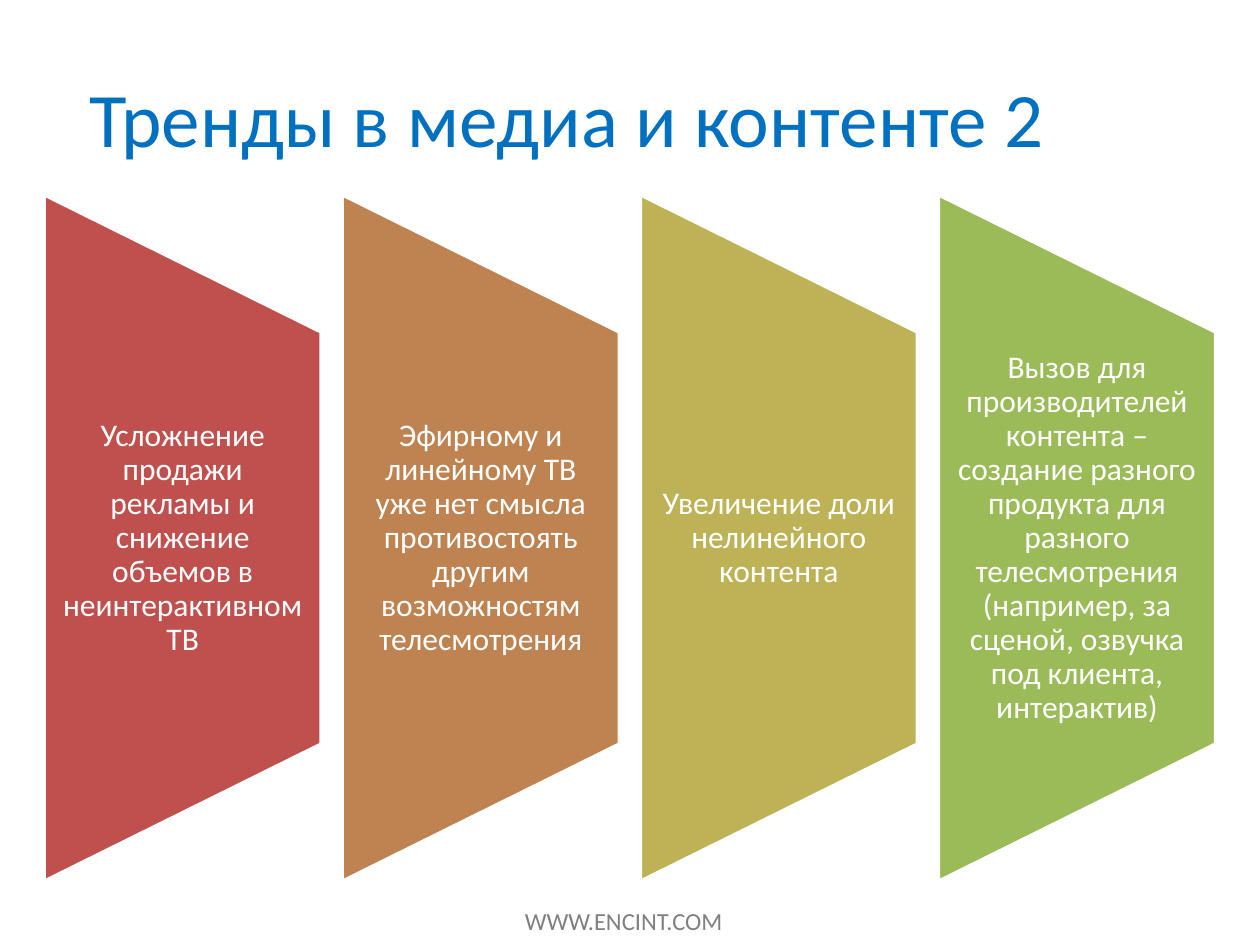
import pptx
import pptx.util
from pptx.dml.color import RGBColor
from pptx.enum.shapes import MSO_SHAPE
from pptx.enum.text import MSO_ANCHOR, PP_ALIGN
from pptx.util import Inches

WHITE = RGBColor(0xFF, 0xFF, 0xFF)
BLUE = RGBColor(0x00, 0x70, 0xC0)
GRAY = RGBColor(0x80, 0x80, 0x80)
RED = RGBColor(0xC0, 0x50, 0x4D)
ORANGE = RGBColor(0xBE, 0x83, 0x51)
OLIVE = RGBColor(0xBD, 0xB2, 0x55)
GREEN = RGBColor(0x9B, 0xBB, 0x59)

TRENDS = [
    (RED, "Усложнение продажи рекламы и снижение объемов в неинтерактивном ТВ"),
    (ORANGE, "Эфирному и линейному ТВ уже нет смысла противостоять другим "
             "возможностям телесмотрения"),
    (OLIVE, "Увеличение доли нелинейного контента"),
    (GREEN, "Вызов для производителей контента – создание разного продукта для "
            "разного телесмотрения (например, за сценой, озвучка под клиента, "
            "интерактив)"),
]
PANEL_LEFT, PANEL_PITCH = 0.35, 2.366
PANEL_WIDTH, PANEL_HEIGHT = 2.2, 5.45
PANEL_MIDDLE = 4.27
LABEL_HEIGHT = 3.27


class SlideBuilder:
    font = "Calibri"

    def __init__(self, slide):
        self.s = slide

    def text(self, text, left, top, width, height, size, color,
             wrap=True, margin_x=0.1, margin_y=0.05, line_spacing=1.0):
        sp = self.s.shapes.add_textbox(
            Inches(left), Inches(top), Inches(width), Inches(height))
        tf = sp.text_frame
        tf.word_wrap = wrap
        tf.vertical_anchor = MSO_ANCHOR.MIDDLE
        tf.margin_left = tf.margin_right = Inches(margin_x)
        tf.margin_top = tf.margin_bottom = Inches(margin_y)
        tf.text = text
        p = tf.paragraphs[0]
        p.alignment = PP_ALIGN.CENTER
        p.line_spacing = line_spacing
        r = p.runs[0]
        r.font.name = self.font
        r.font.size = pptx.util.Pt(size)
        r.font.color.rgb = color

    def trapezoid(self, left, middle, width, height, color):
        """Draw a trapezoid with its long side on the left; sizes are as seen."""
        sp = self.s.shapes.add_shape(
            MSO_SHAPE.FLOWCHART_MANUAL_OPERATION,
            Inches(left + (width - height) / 2), Inches(middle - width / 2),
            Inches(height), Inches(width))
        sp.rotation = 270
        sp.shadow.inherit = False
        sp.fill.solid()
        sp.fill.fore_color.rgb = color
        sp.line.color.rgb = WHITE
        sp.line.width = pptx.util.Pt(2)


def main():
    prs = pptx.Presentation()
    prs.slide_width, prs.slide_height = Inches(10), Inches(7.5)
    builder = SlideBuilder(prs.slides.add_slide(prs.slide_layouts[6]))

    builder.text("WWW.ENCINT.COM", 4.06, 7.14, 1.78, 0.34, 14, GRAY, wrap=False)
    for i, (color, label) in enumerate(TRENDS):
        left = PANEL_LEFT + i * PANEL_PITCH
        builder.trapezoid(left, PANEL_MIDDLE, PANEL_WIDTH, PANEL_HEIGHT, color)
        builder.text(label, left, PANEL_MIDDLE - LABEL_HEIGHT / 2, PANEL_WIDTH,
                     LABEL_HEIGHT, 18, WHITE, margin_x=0.12, margin_y=0,
                     line_spacing=0.9)
    builder.text("Тренды в медиа и контенте 2", 0, 0.3, 9, 1.25, 44, BLUE)

    prs.save("out.pptx")


if __name__ == "__main__":
    main()
